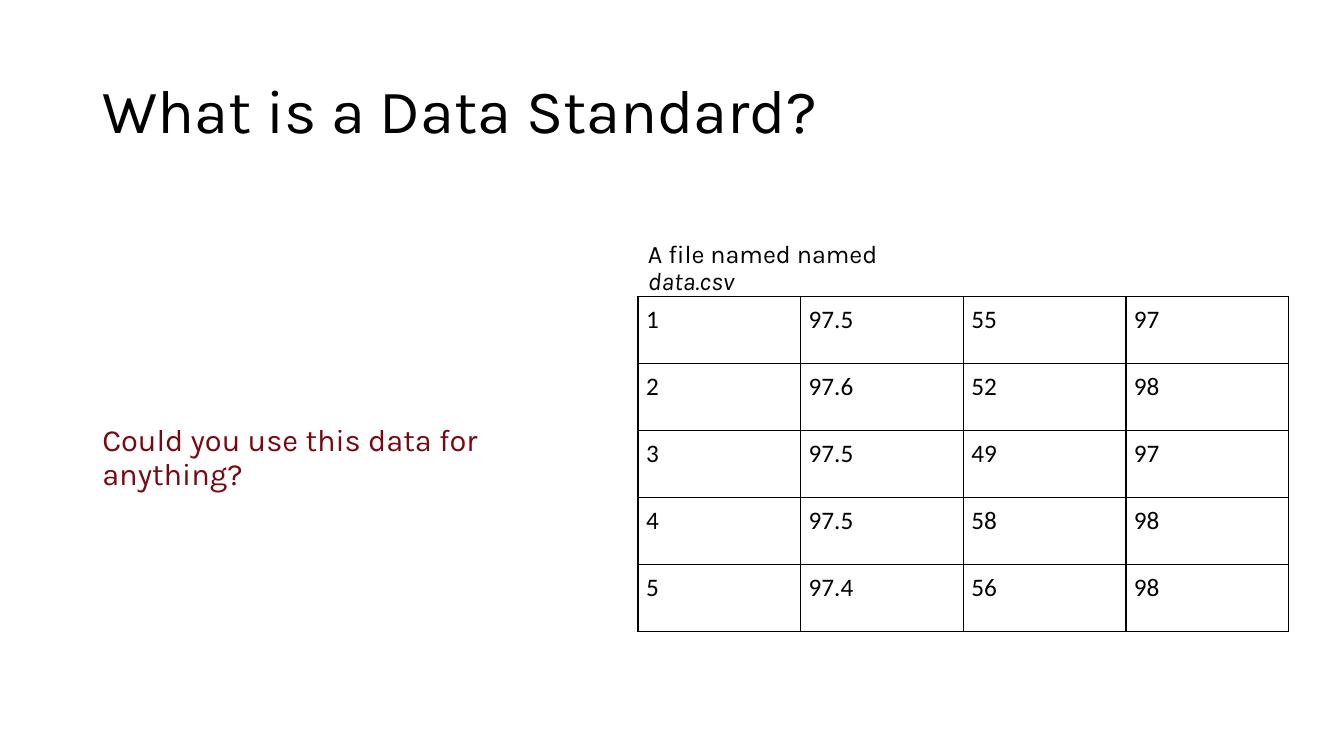
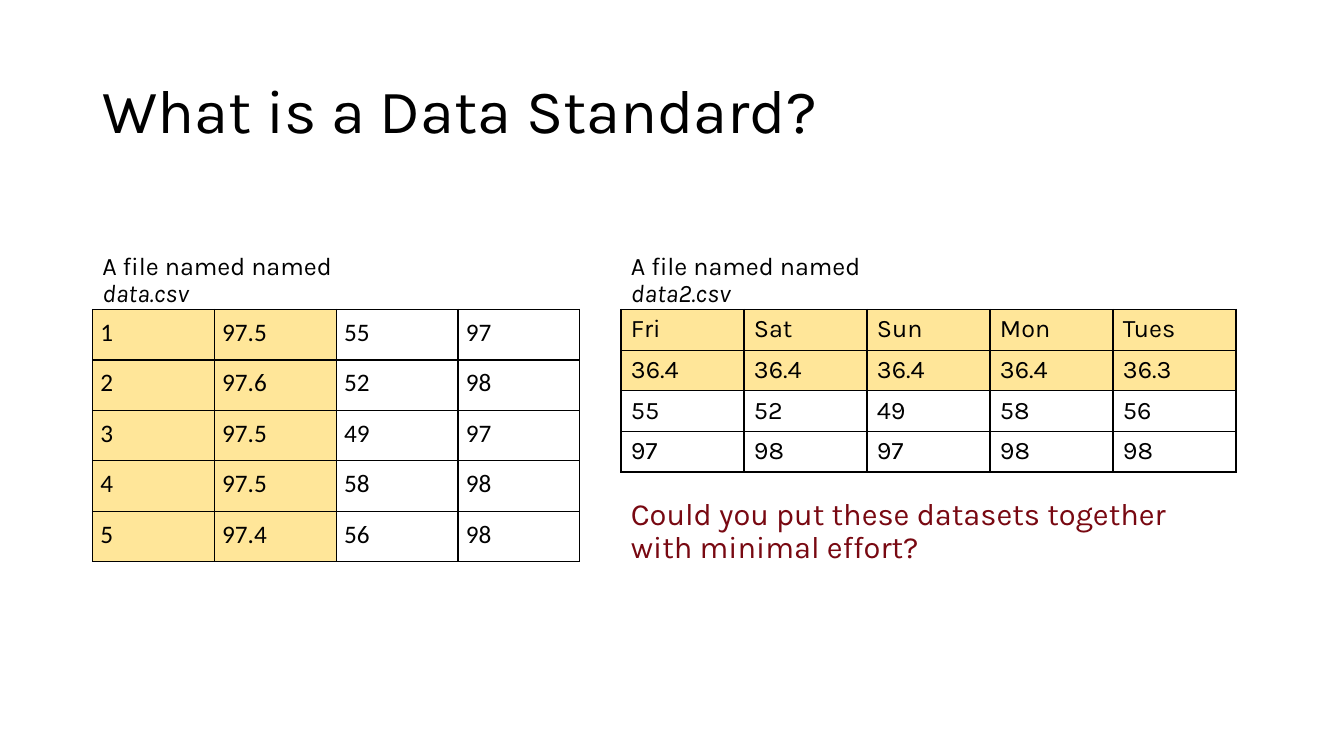
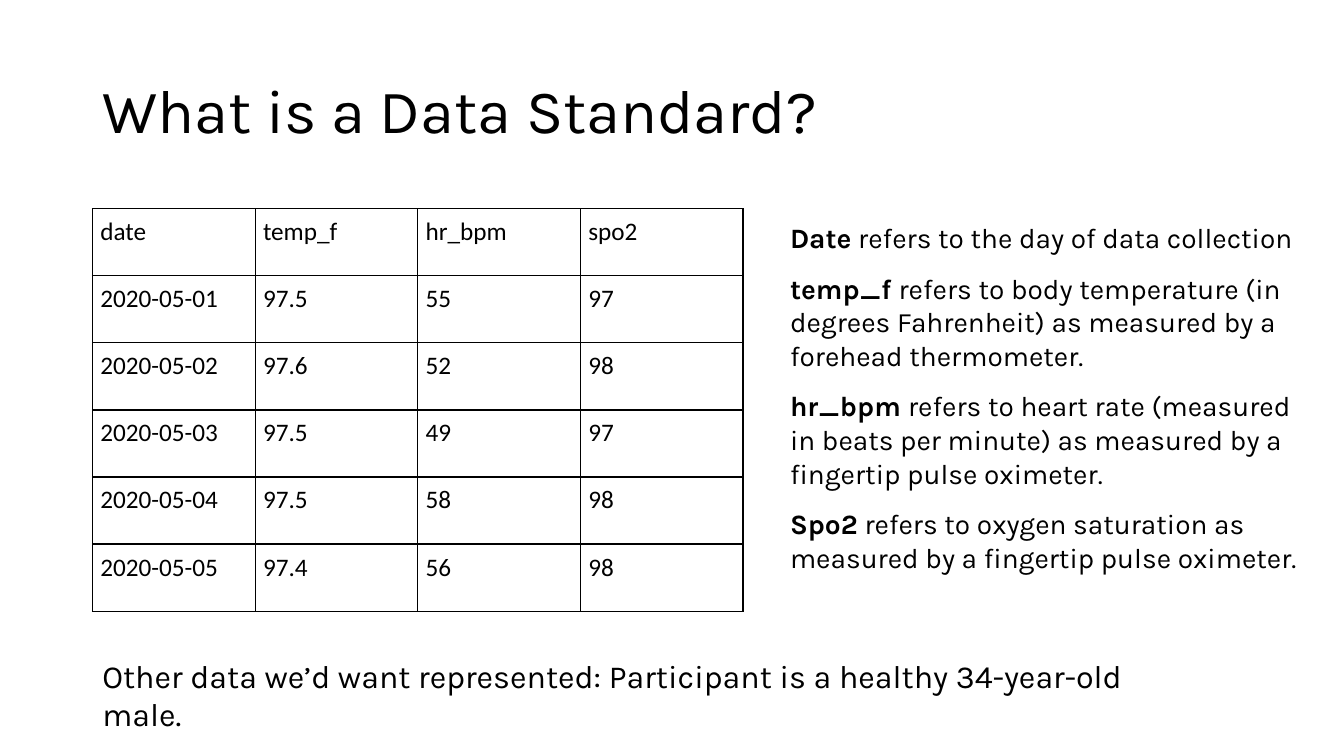
from lxml import etree
from pptx import Presentation
from pptx.dml.color import RGBColor
from pptx.enum.text import MSO_ANCHOR
from pptx.oxml.ns import qn
from pptx.util import Cm, Pt

TOP, MIDDLE = MSO_ANCHOR.TOP, MSO_ANCHOR.MIDDLE
COLORS = {"text": "000000", "question": "780811", "highlight": "FFE699", "border": "000000"}
HEADING_FONT, DATA_FONT = "Karla", "Calibri"
LEFT = 2.33
BLANK_LAYOUT = 6


def write_text(frame, paragraphs, size=18, font=HEADING_FONT, color="text",
               spacing=1.0, gap=0, anchor=TOP):
    """Each paragraph is a list of (text, style) runs; style is "", "b" or "i"."""
    frame.word_wrap = True
    frame.vertical_anchor = anchor
    for index, runs in enumerate(paragraphs):
        paragraph = frame.add_paragraph() if index else frame.paragraphs[0]
        paragraph.line_spacing = spacing
        paragraph.space_before = Pt(gap if index else 0)
        for text, style in runs:
            run = paragraph.add_run()
            run.text = text
            run.font.name = font
            run.font.size = Pt(size)
            run.font.bold = style == "b"
            run.font.italic = style == "i"
            run.font.color.rgb = RGBColor.from_string(COLORS[color])


def add_grid(slide, rows, left, top, column_width, row_height, font=DATA_FONT,
             margins=(0.2, 0.2), highlighted_rows=0, highlighted_columns=0):
    """Margins are (side, top and bottom) in cm; highlights count from the top left."""
    table = slide.shapes.add_table(
        len(rows), len(rows[0]), Cm(left), Cm(top),
        Cm(column_width * len(rows[0])), Cm(row_height * len(rows))).table
    table.first_row = table.horz_banding = False
    for column in table.columns:
        column.width = Cm(column_width)
    for r, row in enumerate(rows):
        table.rows[r].height = Cm(row_height)
        for c, value in enumerate(row):
            cell = table.cell(r, c)
            cell.margin_left = cell.margin_right = Cm(margins[0])
            cell.margin_top = cell.margin_bottom = Cm(margins[1])
            write_text(cell.text_frame, [[(str(value), "")]], font=font)
            properties = cell._tc.get_or_add_tcPr()
            for side in ("a:lnL", "a:lnR", "a:lnT", "a:lnB"):
                border = etree.SubElement(properties, qn(side), w=str(Pt(1)))
                fill = etree.SubElement(border, qn("a:solidFill"))
                etree.SubElement(fill, qn("a:srgbClr"), val=COLORS["border"])
            if r < highlighted_rows or c < highlighted_columns:
                cell.fill.solid()
                cell.fill.fore_color.rgb = RGBColor.from_string(COLORS["highlight"])
            else:
                cell.fill.background()


temperatures = [97.5, 97.6, 97.5, 97.5, 97.4]
heart_rates = [55, 52, 49, 58, 56]
oxygen_levels = [97, 98, 97, 98, 98]
readings = list(zip(temperatures, heart_rates, oxygen_levels))
numbered_readings = [(day, *reading) for day, reading in enumerate(readings, 1)]
dated_readings = [(f"2020-05-{day:02}", *reading) for day, *reading in numbered_readings]
celsius = [round((degrees - 32) * 5 / 9, 1) for degrees in temperatures]

deck = Presentation()
deck.slide_width, deck.slide_height = Cm(33.87), Cm(19.05)
slides = [deck.slides.add_slide(deck.slide_layouts[BLANK_LAYOUT]) for _ in range(3)]
unlabeled, mismatched, documented = slides

for slide in slides:
    title = slide.shapes.add_textbox(Cm(LEFT), Cm(1.02), Cm(29.21), Cm(3.68))
    write_text(title.text_frame, [[("What is a Data Standard?", "")]],
               size=44, spacing=0.9, anchor=MIDDLE)

for slide, left, top, width, file_name in [
    (unlabeled, 16.08, 5.97, 8.18, "data.csv"),
    (mismatched, LEFT, 6.27, 8.18, "data.csv"),
    (mismatched, 15.65, 6.27, 8.48, "data2.csv"),
]:
    caption = slide.shapes.add_textbox(Cm(left), Cm(top), Cm(width), Cm(0.94))
    write_text(caption.text_frame, [[("A file named named ", ""), (file_name, "i")]], spacing=0.9)

for slide, left, top, width, question in [
    (unlabeled, LEFT, 10.59, 12.75, "Could you use this data for anything?"),
    (mismatched, 15.65, 12.45, 15.49,
     "Could you put these datasets together with minimal effort?"),
]:
    prompt = slide.shapes.add_textbox(Cm(left), Cm(top), Cm(width), Cm(1.95))
    write_text(prompt.text_frame, [[(question, "")]], size=22, color="question", spacing=0.9)

add_grid(unlabeled, numbered_readings, 16.08, 7.47, 4.1, 1.69)

add_grid(mismatched, numbered_readings, LEFT, 7.8, 3.07, 1.27, highlighted_columns=2)
add_grid(mismatched,
         [["Fri", "Sat", "Sun", "Mon", "Tues"], celsius, heart_rates, oxygen_levels],
         15.65, 7.8, 3.1, 1, font=HEADING_FONT, margins=(0.25, 0.13), highlighted_rows=2)

add_grid(documented, [("date", "temp_f", "hr_bpm", "spo2"), *dated_readings],
         LEFT, 5.26, 4.1, 1.69)
definitions = documented.shapes.add_textbox(Cm(19.66), Cm(5.44), Cm(13.54), Cm(9.25))
write_text(definitions.text_frame, [
    [("Date", "b"), (" refers to the day of data collection", "")],
    [("temp_f ", "b"), ("refers to body temperature (in degrees Fahrenheit) "
                        "as measured by a forehead thermometer.", "")],
    [("hr_bpm ", "b"), ("refers to heart rate (measured in beats per minute) "
                        "as measured by a fingertip pulse oximeter.", "")],
    [("Spo2", "b"), (" refers to oxygen saturation as measured by a fingertip "
                     "pulse oximeter.", "")],
], size=20, gap=12)
participant = documented.shapes.add_textbox(Cm(LEFT), Cm(16.41), Cm(26.59), Cm(1.24))
write_text(participant.text_frame, [[(
    "Other data we’d want represented: Participant is a healthy 34-year-old male.", "")]], size=23)

deck.save("out.pptx")
